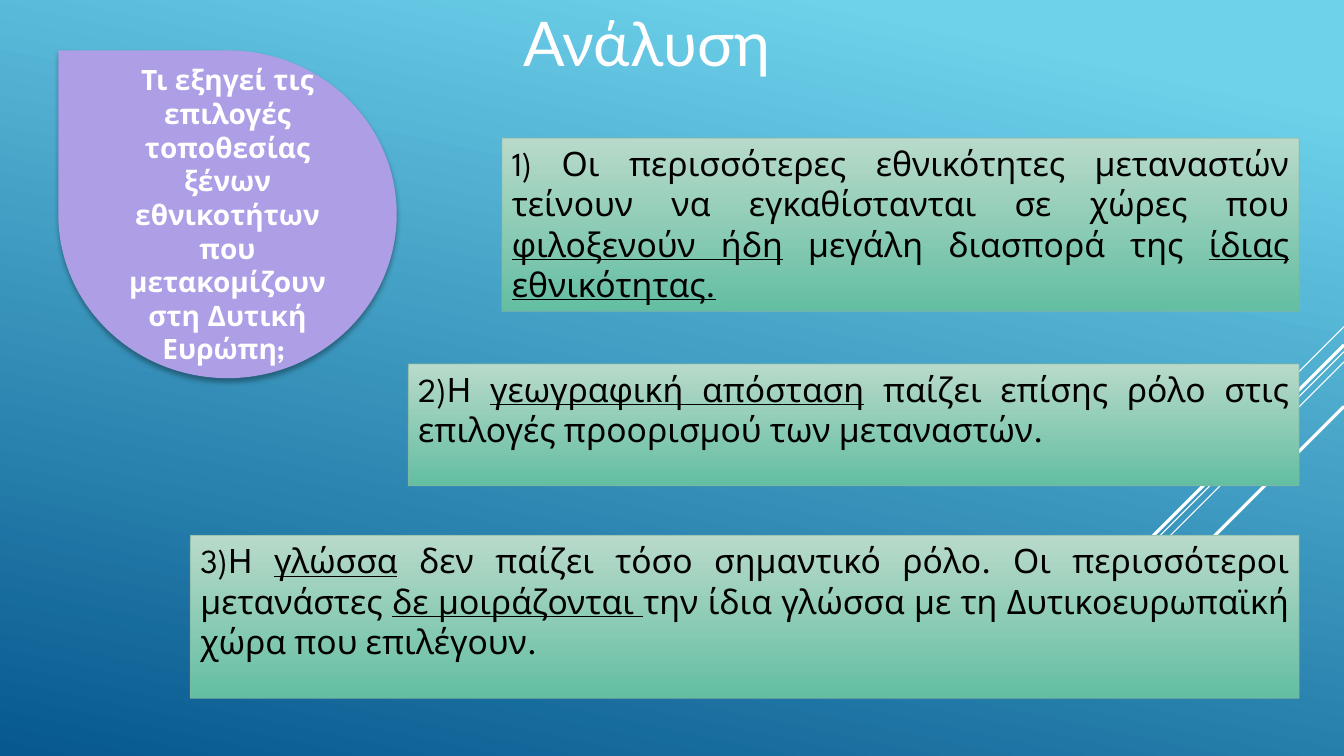
"""Build the slide on what explains migrants' choice of destination."""
from dataclasses import dataclass

from lxml.etree import SubElement
from pptx import Presentation
from pptx.dml.color import RGBColor
from pptx.enum.shapes import MSO_CONNECTOR, MSO_SHAPE
from pptx.enum.text import MSO_ANCHOR, PP_ALIGN
from pptx.oxml import parse_xml
from pptx.oxml.ns import nsdecls, qn
from pptx.util import Cm, Pt


@dataclass(frozen=True)
class Theme:
    white: RGBColor = RGBColor.from_string("FFFFFF")
    black: RGBColor = RGBColor.from_string("000000")
    sky: RGBColor = RGBColor.from_string("6ED2EB")
    sea: RGBColor = RGBColor.from_string("06588E")
    mint: RGBColor = RGBColor.from_string("B9DACA")
    jade: RGBColor = RGBColor.from_string("63BEA2")
    border: RGBColor = RGBColor.from_string("8AB7A1")
    lilac: RGBColor = RGBColor.from_string("AD9EE6")
    title_font: str = "Lato"
    body_font: str = "League Spartan"
    title_size: int = 44
    body_size: int = 24
    question_size: int = 20


def fill_gradient(fill, angle, stops):
    fill.gradient()
    fill.gradient_angle = angle
    for stop, (position, color) in zip(fill.gradient_stops, stops):
        stop.position = position
        stop.color.rgb = color


def write_text(shape, spans, align, anchor, font_format):
    frame = shape.text_frame
    frame.word_wrap = True
    frame.vertical_anchor = anchor
    para = frame.paragraphs[0]
    para.alignment = align
    for index, text in enumerate(spans):
        span = para.add_run()
        span.text = text
        span.font.color.rgb = font_format["color"]
        values = {"name": font_format["name"], "size": Pt(font_format["size"]),
                  "bold": font_format["bold"], "underline": index % 2 == 1}
        for attribute, value in values.items():
            setattr(span.font, attribute, value)


theme = Theme()
deck = Presentation()
deck.slide_width, deck.slide_height = Cm(33.87), Cm(19.05)
page = deck.slides.add_slide(deck.slide_layouts[6])
fill_gradient(page.background.fill, 258, [(0.1, theme.sky), (1, theme.sea)])

right_edge = 33.87
diagonals = [(8.23, 2.54, 0.75), (8.86, 8.28, 0.75), (9.12, 5.27, 0.75),
             (8.69, 4.85, 2.25), (10.24, 3.53, 2.25)]
for top, run, weight in diagonals:
    diagonal = page.shapes.add_connector(
        MSO_CONNECTOR.STRAIGHT, Cm(right_edge), Cm(top), Cm(right_edge - run), Cm(top + run))
    diagonal.line.color.rgb = theme.white
    diagonal.line.width = Pt(weight)
    SubElement(diagonal._element.spPr, qn("a:effectLst"))

box_right = 32.74
body_format = {"name": theme.body_font, "size": theme.body_size,
               "color": theme.black, "bold": False}
findings = [
    (10.29, 9.17, 3.07, ["2)Η ", "γεωγραφική απόσταση",
                         " παίζει επίσης ρόλο στις επιλογές προορισμού των μεταναστών."]),
    (4.8, 13.49, 4.11, ["3)Η ", "γλώσσα",
                        " δεν παίζει τόσο σημαντικό ρόλο. Οι περισσότεροι μετανάστες ",
                        "δε μοιράζονται ",
                        "την ίδια γλώσσα με τη Δυτικοευρωπαϊκή χώρα που επιλέγουν."]),
    (12.65, 3.48, 4.37, ["1) Οι περισσότερες εθνικότητες μεταναστών τείνουν να "
                         "εγκαθίστανται σε χώρες που ", "φιλοξενούν ήδη",
                         " μεγάλη διασπορά της ", "ίδιας εθνικότητας."]),
]
for left, top, height, spans in findings:
    box = page.shapes.add_shape(
        MSO_SHAPE.RECTANGLE, Cm(left), Cm(top), Cm(box_right - left), Cm(height))
    box.shadow.inherit = False
    fill_gradient(box.fill, 270, [(0, theme.mint), (1, theme.jade)])
    box.line.color.rgb = theme.border
    box.line.width = Pt(0.75)
    line_color = box.line.fill._xPr.find(qn("a:solidFill"))[0]
    SubElement(line_color, qn("a:alpha"), val="60000")
    write_text(box, spans, PP_ALIGN.JUSTIFY, MSO_ANCHOR.TOP, body_format)

title = page.shapes.add_textbox(Cm(7.82), Cm(0), Cm(16.97), Cm(2.13))
title_format = {"name": theme.title_font, "size": theme.title_size,
                "color": theme.white, "bold": False}
write_text(title, ["Ανάλυση"], PP_ALIGN.CENTER, MSO_ANCHOR.TOP, title_format)

question = page.shapes.add_shape(MSO_SHAPE.TEAR, Cm(1.47), Cm(1.27), Cm(8.53), Cm(8.26))
question._element.spPr.xfrm.set("flipH", "1")
question.fill.solid()
question.fill.fore_color.rgb = theme.lilac
question.line.fill.background()
question._element.spPr.append(parse_xml(
    f'<a:effectLst {nsdecls("a")}><a:outerShdw blurRad="{Pt(3.5)}" dist="{Pt(2.2)}" '
    f'dir="5400000" algn="ctr" rotWithShape="0"><a:srgbClr val="{theme.black}">'
    '<a:alpha val="32000"/></a:srgbClr></a:outerShdw></a:effectLst>'))
question_format = {"name": theme.body_font, "size": theme.question_size,
                   "color": theme.white, "bold": True}
question_text = ("Τι εξηγεί τις επιλογές τοποθεσίας ξένων εθνικοτήτων "
                 "που μετακομίζουν στη Δυτική Ευρώπη; ")
write_text(question, [question_text], PP_ALIGN.CENTER, MSO_ANCHOR.MIDDLE, question_format)

deck.save("out.pptx")
